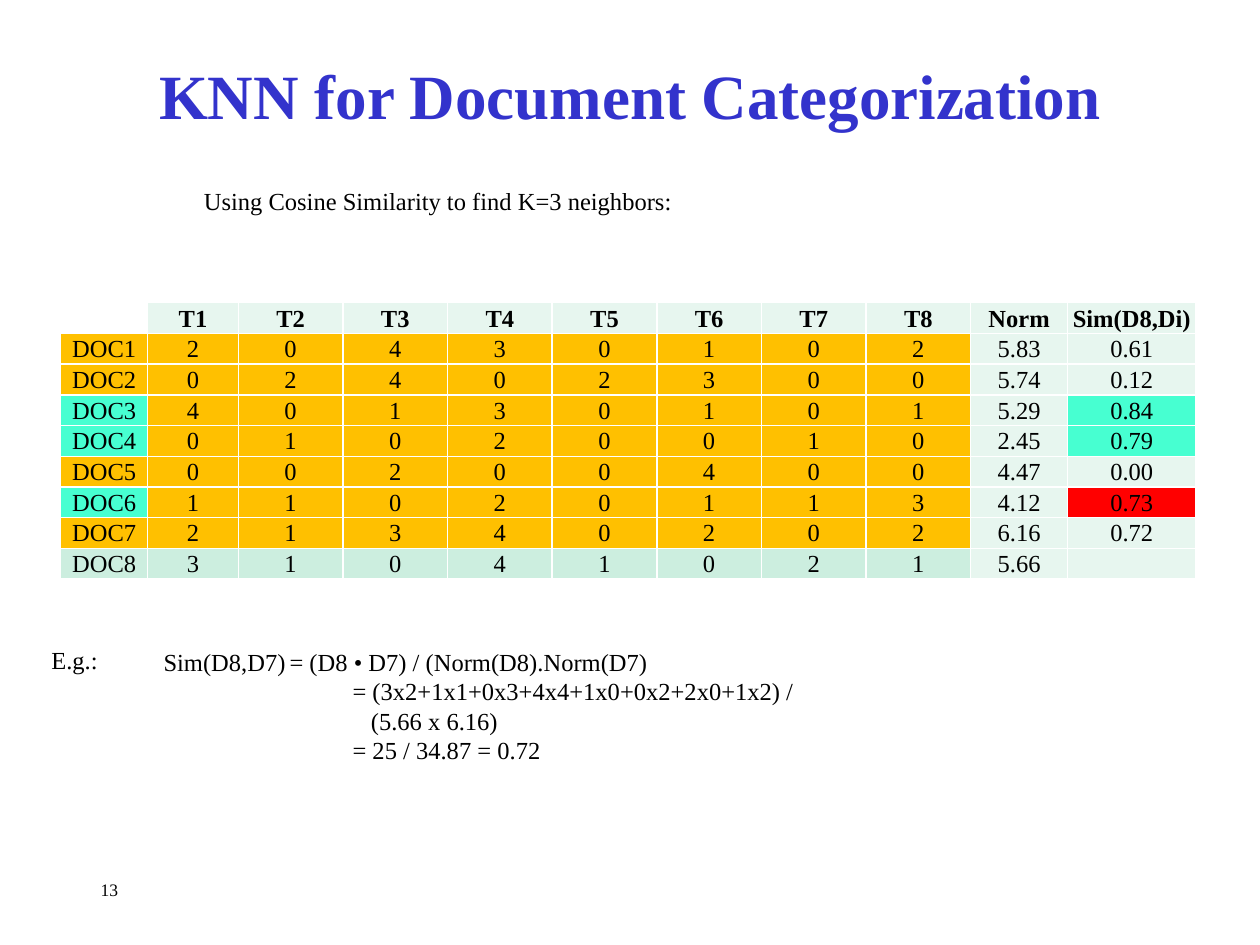
from dataclasses import dataclass

from lxml import etree
from pptx import Presentation
from pptx.dml.color import RGBColor
from pptx.enum import text
from pptx.oxml import ns
from pptx.util import Pt


@dataclass(frozen=True)
class Theme:
    font: str = "Times New Roman"
    title_size: float = 36
    body_size: float = 14
    number_size: float = 10
    title: str = "3333CC"
    ink: str = "000000"
    paper: str = "FFFFFF"
    pale: str = "E7F6EF"
    training: str = "FFC000"
    query: str = "CCEEDF"
    neighbor: str = "47FFD1"
    third: str = "FF0000"


THEME = Theme()
LEFT, CENTER = text.PP_ALIGN.LEFT, text.PP_ALIGN.CENTER
TOP, MIDDLE = text.MSO_ANCHOR.TOP, text.MSO_ANCHOR.MIDDLE

HEADER = ["", "T1", "T2", "T3", "T4", "T5", "T6", "T7", "T8", "Norm", "Sim(D8,Di)"]
DOCUMENTS = [
    ("20430102", "5.83", "0.61"),
    ("02402300", "5.74", "0.12"),
    ("40130101", "5.29", "0.84"),
    ("01020010", "2.45", "0.79"),
    ("00200400", "4.47", "0.00"),
    ("11020113", "4.12", "0.73"),
    ("21340202", "6.16", "0.72"),
    ("31041021", "5.66", ""),
]
ROWS = [HEADER] + [
    [f"DOC{number}", *counts, norm, similarity]
    for number, (counts, norm, similarity) in enumerate(DOCUMENTS, 1)
]
COLUMN_WIDTHS = [49.7, 51.8] + [59.8] * 7 + [55.4, 73.4]
ROW_HEIGHT = 15.12
QUERY_ROW = len(DOCUMENTS)
NORM_COLUMN, SIMILARITY_COLUMN = 9, 10
HIGHLIGHTS = {
    (0, 0): THEME.paper,
    (6, SIMILARITY_COLUMN): THEME.third,
    **{(row, 0): THEME.neighbor for row in (3, 4, 6)},
    **{(row, SIMILARITY_COLUMN): THEME.neighbor for row in (3, 4)},
}

FORMULA_INDENT = 108
FORMULA = [
    ("Sim(D8,D7)\t= (D8 • D7) / (Norm(D8).Norm(D7)", 0),
    ("= (3x2+1x1+0x3+4x4+1x0+0x2+2x0+1x2) /", FORMULA_INDENT),
    ("(5.66 x 6.16)", FORMULA_INDENT + 10.5),
    ("= 25 / 34.87 = 0.72", FORMULA_INDENT),
]


def apply(target, values):
    for name, value in values.items():
        setattr(target, name, value)


def write(paragraph, words, size=THEME.body_size, color=THEME.ink, bold=False, align=LEFT):
    paragraph.alignment = align
    if not words:
        etree.SubElement(paragraph._p, ns.qn("a:endParaRPr"), sz=str(size * 100))
        return
    run = paragraph.add_run()
    run.text = words
    apply(run.font, {"name": THEME.font, "size": Pt(size), "bold": bold})
    run.font.color.rgb = RGBColor.from_string(color)


def add_text(slide, box, words="", anchor=TOP, **style):
    frame = slide.shapes.add_textbox(*map(Pt, box)).text_frame
    apply(frame, {"word_wrap": True, "vertical_anchor": anchor})
    if words:
        write(frame.paragraphs[0], words, **style)
    return frame


def add_formula(slide, box):
    frame = add_text(slide, box)
    for number, (words, indent) in enumerate(FORMULA):
        paragraph = frame.add_paragraph() if number else frame.paragraphs[0]
        write(paragraph, words)
        properties = paragraph._p.get_or_add_pPr()
        apply_indent = {"marL": str(int(Pt(indent))), "indent": "0"}
        for name, value in apply_indent.items():
            properties.set(name, value)
        if "\t" in words:
            stops = etree.SubElement(properties, ns.qn("a:tabLst"))
            etree.SubElement(stops, ns.qn("a:tab"), pos=str(int(Pt(FORMULA_INDENT))), algn="l")


def cell_color(row, column):
    if (row, column) in HIGHLIGHTS:
        return HIGHLIGHTS[row, column]
    if row == 0 or column >= NORM_COLUMN:
        return THEME.pale
    return THEME.query if row == QUERY_ROW else THEME.training


def add_borders(cell):
    properties = cell._tc.get_or_add_tcPr()
    for side in ("lnL", "lnR", "lnT", "lnB"):
        line = etree.SubElement(properties, ns.qn(f"a:{side}"), w=str(int(Pt(1))))
        fill = etree.SubElement(line, ns.qn("a:solidFill"))
        etree.SubElement(fill, ns.qn("a:srgbClr"), val=THEME.paper)


def add_similarity_table(slide, left, top):
    size = sum(COLUMN_WIDTHS), ROW_HEIGHT * len(ROWS)
    table = slide.shapes.add_table(
        len(ROWS), len(HEADER), *map(Pt, (left, top, *size))
    ).table
    apply(table, {"first_row": False, "horz_banding": False})
    for column, width in zip(table.columns, COLUMN_WIDTHS):
        column.width = Pt(width)
    cell_format = {
        "margin_left": Pt(0.72),
        "margin_right": Pt(0.72),
        "margin_top": Pt(0.72),
        "margin_bottom": 0,
        "vertical_anchor": MIDDLE,
    }
    for row, values in enumerate(ROWS):
        table.rows[row].height = Pt(ROW_HEIGHT)
        for column, value in enumerate(values):
            cell = table.cell(row, column)
            apply(cell, cell_format)
            add_borders(cell)
            cell.fill.solid()
            cell.fill.fore_color.rgb = RGBColor.from_string(cell_color(row, column))
            write(cell.text_frame.paragraphs[0], value, bold=row == 0, align=CENTER)


def main():
    presentation = Presentation()
    apply(presentation, {"slide_width": Pt(720), "slide_height": Pt(540)})
    slide = presentation.slides.add_slide(presentation.slide_layouts[6])
    add_text(slide, (54, 24, 612, 60), "KNN for Document Categorization", MIDDLE,
             size=THEME.title_size, color=THEME.title, bold=True, align=CENTER)
    add_text(slide, (50.4, 499, 270, 18), "13", size=THEME.number_size)
    add_similarity_table(slide, 34.7, 173)
    add_text(slide, (109.4, 102.5, 507.6, 36), "Using Cosine Similarity to find K=3 neighbors:")
    add_text(slide, (22.3, 365, 64, 36), "E.g.:")
    add_formula(slide, (86.4, 366, 385, 75))
    presentation.save("out.pptx")


if __name__ == "__main__":
    main()
